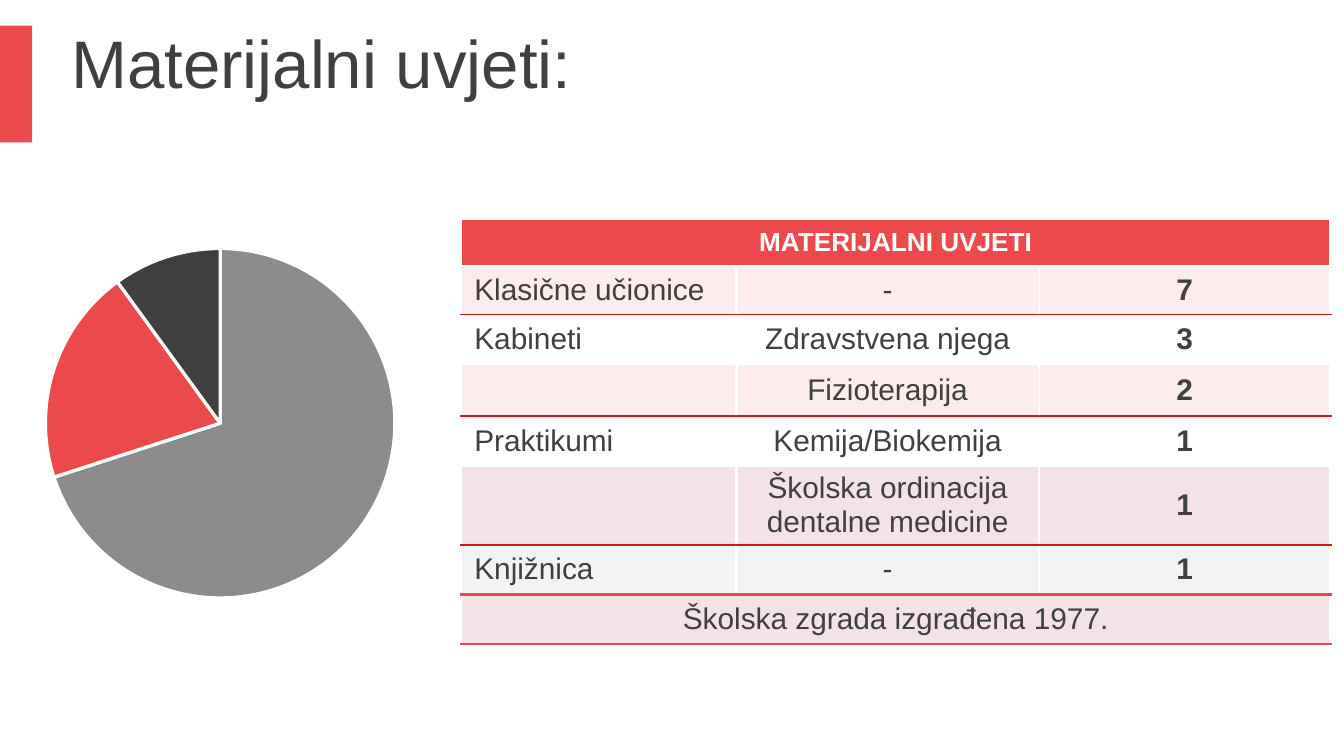
from lxml import etree
from pptx import Presentation
from pptx import util as u
from pptx.chart.data import CategoryChartData
from pptx.dml.color import RGBColor
from pptx.enum import chart, shapes, text
from pptx.oxml import ns

FONT = "Arial"
RED, DARK_RED, WHITE, GREY = "EB494B", "D01719", "FFFFFF", "404040"
ROSE, PALE = "F3E3E6", "F3F3F5"
TINT = (RED, 10)  # colour, opacity in percent


def rgb(value):
    return RGBColor.from_string(value)


def add_xml(parent, tag, **attrs):
    return etree.SubElement(parent, ns.qn(tag), attrs)


class Deck:
    """Holds the style and the current slide."""

    def __init__(self, width, height):
        self.prs = Presentation()
        self.prs.slide_width = u.Inches(width)
        self.prs.slide_height = u.Inches(height)
        self.s = self.prs.slides.add_slide(self.prs.slide_layouts[5])

    def box(self, *at):
        return [u.Inches(v) for v in at]

    def run(self, p, words, size, color, bold=False):
        r = p.add_run()
        r.text = words
        r.font.name, r.font.size, r.font.bold = FONT, u.Pt(size), bold
        r.font.color.rgb = rgb(color)

    def bar(self, at, color):
        sp = self.s.shapes.add_shape(shapes.MSO_SHAPE.RECTANGLE, *self.box(*at))
        sp.shadow.inherit = False
        sp.fill.solid()
        sp.fill.fore_color.rgb = rgb(color)
        sp.line.fill.background()

    def title(self, at, words):
        sp = self.s.shapes.title
        sp.left, sp.top, sp.width, sp.height = self.box(*at)
        tf = sp.text_frame
        tf.word_wrap = True
        tf.auto_size = text.MSO_AUTO_SIZE.NONE
        tf.vertical_anchor = text.MSO_ANCHOR.MIDDLE
        p = tf.paragraphs[0]
        p.alignment = text.PP_ALIGN.LEFT
        self.run(p, words, 36, GREY)

    def fill_cell(self, cell, fill):
        if fill is None:
            cell.fill.background()
            return
        color, opacity = fill if isinstance(fill, tuple) else (fill, 100)
        cell.fill.solid()
        cell.fill.fore_color.rgb = rgb(color)
        if opacity < 100:
            srgb = cell._tc.tcPr.find(".//" + ns.qn("a:srgbClr"))
            add_xml(srgb, "a:alpha", val=str(opacity * 1000))

    def borders(self, cell, top, bottom, first):
        side = (WHITE, 1.5)
        lines = {} if first else {"a:lnL": side}
        lines.update({"a:lnR": side, "a:lnT": top, "a:lnB": bottom})
        for i, (tag, (color, width)) in enumerate(lines.items()):
            ln = etree.Element(ns.qn(tag), w=str(u.Pt(width)))
            add_xml(add_xml(ln, "a:solidFill"), "a:srgbClr", val=color)
            cell._tc.get_or_add_tcPr().insert(i, ln)

    def table(self, at, widths, rows):
        """Each row is (height, fill, bottom line, texts); one text spans the row."""
        frame = self.s.shapes.add_table(len(rows), len(widths), *self.box(*at))
        table = frame.table
        table.first_row = table.horz_banding = False
        for col, width in zip(table.columns, widths):
            col.width = u.Inches(width)
        top = (WHITE, 1.5)
        for y, (height, fill, bottom, texts) in enumerate(rows):
            table.rows[y].height = u.Inches(height)
            spans = len(texts) == 1
            if spans:
                table.cell(y, 0).merge(table.cell(y, len(widths) - 1))
            for x in range(len(widths)):
                cell = table.cell(y, x)
                self.fill_cell(cell, fill)
                self.borders(cell, top, bottom, x == 0)
                cell.vertical_anchor = text.MSO_ANCHOR.MIDDLE
                cell.margin_top = cell.margin_bottom = u.Inches(0.04)
                if x < len(texts) and texts[x]:
                    p = cell.text_frame.paragraphs[0]
                    if spans or x:
                        p.alignment = text.PP_ALIGN.CENTER
                    head = y == 0
                    self.run(p, texts[x], 14 if head else 16,
                             WHITE if head else GREY, head or x == 2)
            top = bottom

    def pie(self, at, values, colors, plot):
        data = CategoryChartData()
        data.categories = [str(i + 1) for i in range(len(values))]
        data.add_series("Series 1", values)
        ch = self.s.shapes.add_chart(
            chart.XL_CHART_TYPE.PIE, *self.box(*at), data).chart
        ch.has_legend = ch.has_title = False
        ch.font.name, ch.font.size = FONT, u.Pt(18)
        ch.font.color.rgb = rgb("000000")
        ch.plots[0].vary_by_categories = True
        for i, color in enumerate(colors):
            fmt = ch.plots[0].series[0].points[i].format
            fmt.fill.solid()
            fmt.fill.fore_color.rgb = rgb(color)
            fmt.line.color.rgb = rgb(WHITE)
            fmt.line.width = u.Pt(1.75)
        # Fixed inner plot area
        area = ch._chartSpace.chart.plotArea
        for old in area.findall(ns.qn("c:layout")):
            area.remove(old)
        layout = etree.Element(ns.qn("c:layout"))
        area.insert(0, layout)
        manual = add_xml(layout, "c:manualLayout")
        add_xml(manual, "c:layoutTarget", val="inner")
        for tag in ("c:xMode", "c:yMode"):
            add_xml(manual, tag, val="edge")
        for tag, value in zip(("c:x", "c:y", "c:w", "c:h"), plot):
            add_xml(manual, tag, val=str(value))


def main():
    deck = Deck(10, 10 * 9 / 16)

    # Heading
    deck.bar((0, 0.19, 0.24, 0.87), RED)
    deck.title((0.43, 0.14, 7.64, 0.63), "Materijalni uvjeti:")

    # Table of rooms
    thin, thick, blank = (DARK_RED, 1), (RED, 1.5), (WHITE, 1.5)
    deck.table((3.43, 1.63, 6.47, 3.16), (2.05, 2.25, 2.17), [
        (0.35, RED, blank, ["MATERIJALNI UVJETI"]),
        (0.36, TINT, thin, ["Klasične učionice", "-", "7"]),
        (0.37, None, blank, ["Kabineti", "Zdravstvena njega", "3"]),
        (0.37, TINT, thin, ["", "Fizioterapija", "2"]),
        (0.37, None, blank, ["Praktikumi", "Kemija/Biokemija", "1"]),
        (0.59, ROSE, thin, ["", "Školska ordinacija dentalne medicine", "1"]),
        (0.37, PALE, thick, ["Knjižnica", "-", "1"]),
        (0.37, ROSE, thick, ["Školska zgrada izgrađena 1977."]),
    ])

    # Pie chart
    deck.pie((0.28, 1.65, 2.89, 3), (70, 20, 10), ("8C8C8C", RED, "3F3F3F"),
             (0.02, 0.05, 0.9, 0.9))

    deck.prs.save("out.pptx")


if __name__ == "__main__":
    main()
